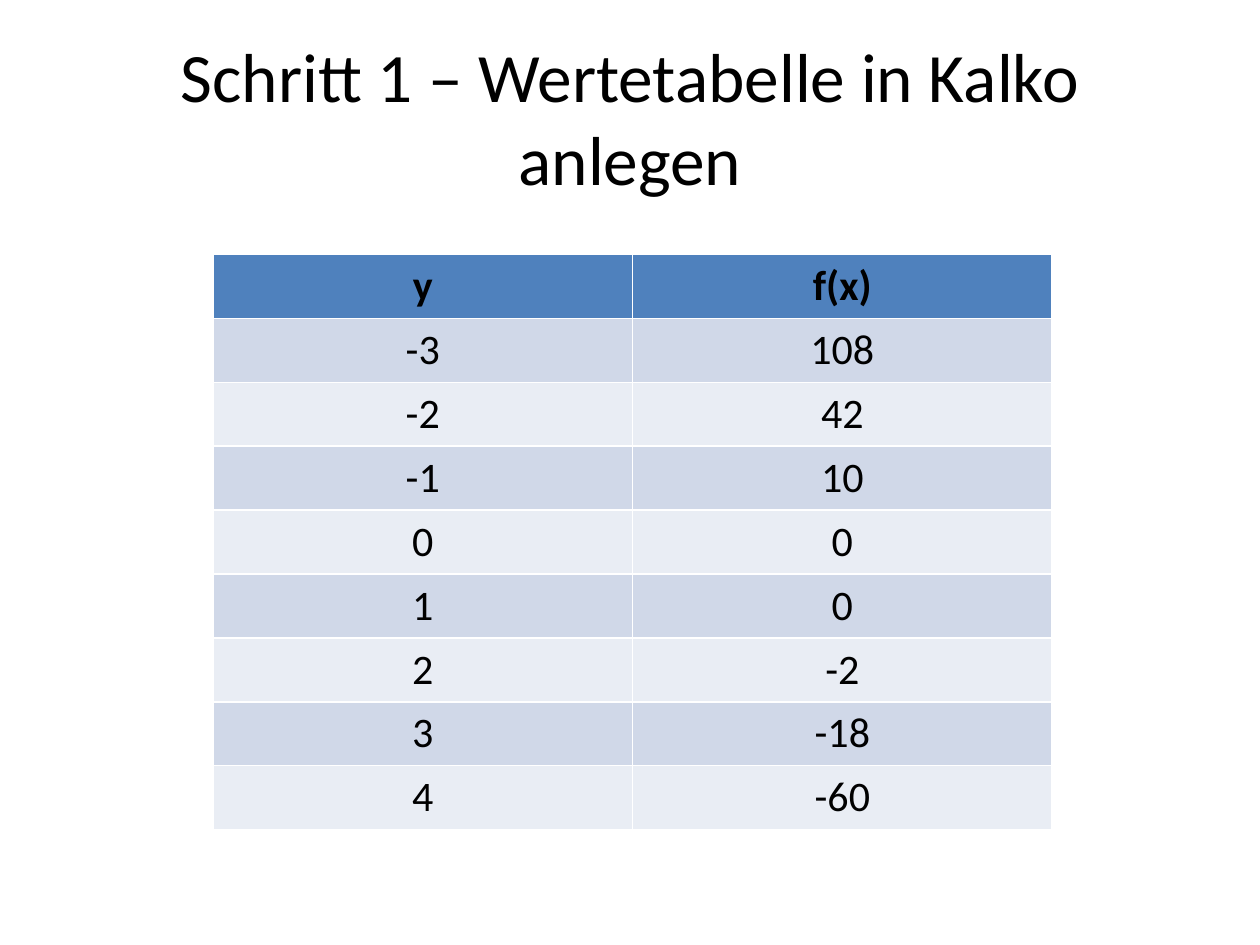
import pptx
import pptx.dml.color
import pptx.enum.text
import pptx.util
from pptx.util import Inches

BLACK = pptx.dml.color.RGBColor(0x00, 0x00, 0x00)
HEADER_BLUE = pptx.dml.color.RGBColor(0x4F, 0x81, 0xBD)
BAND_DARK = pptx.dml.color.RGBColor(0xD0, 0xD8, 0xE8)
BAND_LIGHT = pptx.dml.color.RGBColor(0xE9, 0xED, 0xF4)

VALUES = [
    ("y", "f(x)"),
    (-3, 108),
    (-2, 42),
    (-1, 10),
    (0, 0),
    (1, 0),
    (2, -2),
    (3, -18),
    (4, -60),
]


def format_paragraph(para, size, bold=False):
    para.alignment = pptx.enum.text.PP_ALIGN.CENTER
    para.font.name = "Calibri"
    para.font.size = pptx.util.Pt(size)
    para.font.bold = bold
    para.font.color.rgb = BLACK


deck = pptx.Presentation()
deck.slide_width = Inches(10)
deck.slide_height = Inches(7.5)
page = deck.slides.add_slide(deck.slide_layouts[5])

title = page.shapes.title
title.left, title.top = Inches(0.5), Inches(0.3)
title.width, title.height = Inches(9), Inches(1.25)
title.text_frame.text = "Schritt 1 – Wertetabelle in Kalko anlegen"
title.text_frame.auto_size = pptx.enum.text.MSO_AUTO_SIZE.NONE
title.text_frame.vertical_anchor = pptx.enum.text.MSO_ANCHOR.MIDDLE
format_paragraph(title.text_frame.paragraphs[0], 39.6)

# The default table style supplies the white rules between the cells.
value_table = page.shapes.add_table(
    len(VALUES), 2, Inches(1.69), Inches(2.02), Inches(6.66), Inches(4.5)
).table
for row_index, row in enumerate(VALUES):
    is_header = row_index == 0
    if is_header:
        fill_color = HEADER_BLUE
    else:
        fill_color = BAND_DARK if row_index % 2 else BAND_LIGHT
    for column_index, value in enumerate(row):
        cell = value_table.cell(row_index, column_index)
        cell.text = str(value)
        cell.fill.solid()
        cell.fill.fore_color.rgb = fill_color
        format_paragraph(cell.text_frame.paragraphs[0], 24, is_header)

deck.save("out.pptx")
